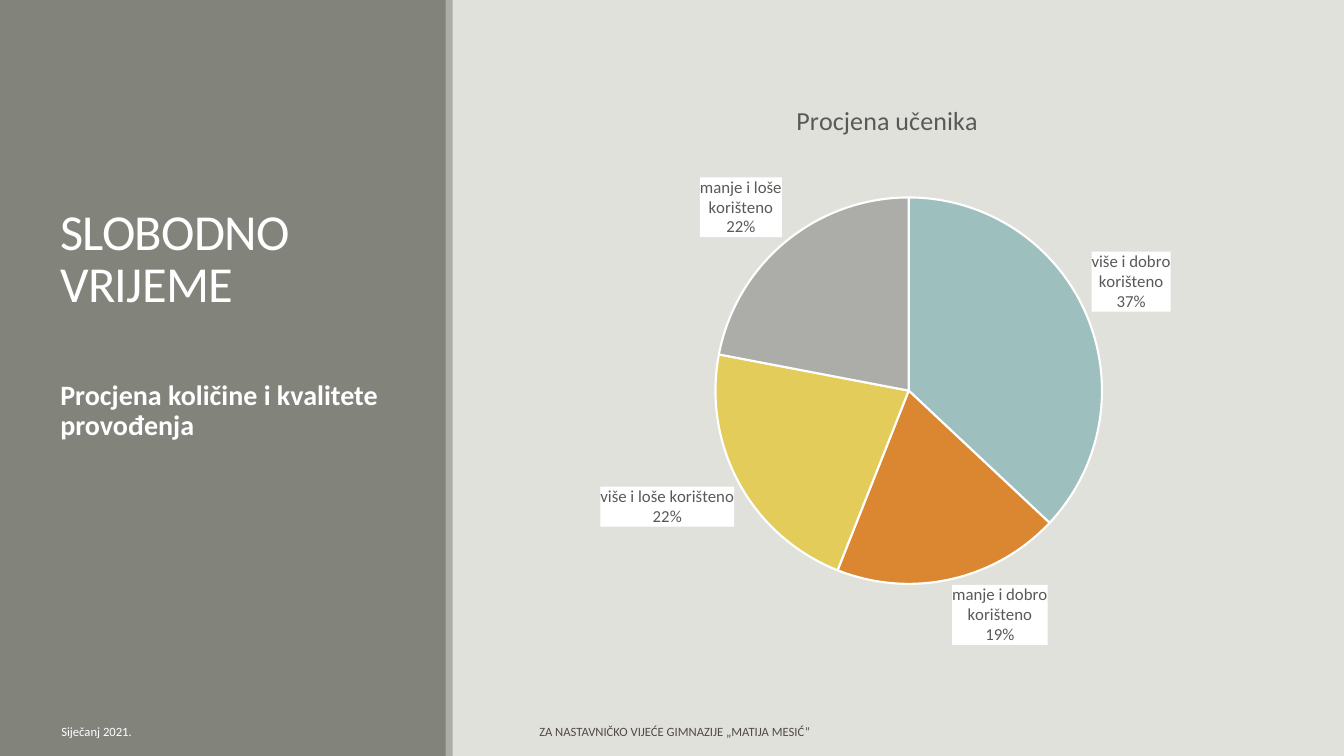
from lxml import etree
from pptx import Presentation
from pptx import util as u
from pptx.chart.data import CategoryChartData
from pptx.dml.color import RGBColor
from pptx.enum import chart as ch, shapes, text
from pptx.oxml import parse_xml
from pptx.oxml.ns import nsdecls, qn

WIDTH, HEIGHT = 13.33, 7.5
FONT = "Calibri"
COLORS = {
    "page": "E1E1DB", "panel": "82847C", "stripe": "ACADA8", "white": "FFFFFF",
    "footer": "514949", "label": "595959",
}
# category, percent, slice colour
SLICES = [
    ("više i dobro korišteno", 37, "9DBFBE"),
    ("manje i dobro korišteno", 19, "DB8631"),
    ("više i loše korišteno", 22, "E3CC5A"),
    ("manje i loše korišteno", 22, "ACADA8"),
]


def inches(box):
    return [u.Inches(length) for length in box]


def paint(fill, color):
    fill.solid()
    fill.fore_color.rgb = RGBColor.from_string(color)


def style_font(font, size, color, bold=False):
    font.name, font.size, font.bold = FONT, u.Pt(size), bold
    font.color.rgb = RGBColor.from_string(color)


def add_band(page, box, color):
    band = page.shapes.add_shape(shapes.MSO_SHAPE.RECTANGLE, *inches(box))
    band.shadow.inherit = False
    paint(band.fill, color)
    band.line.fill.background()


def add_words(page, box, words, size, color, anchor, bold=False, leading=1.0):
    frame = page.shapes.add_textbox(*inches(box)).text_frame
    frame.word_wrap = True
    frame.vertical_anchor = anchor
    frame.text = words
    para = frame.paragraphs[0]
    para.line_spacing = leading
    span = para.runs[0]
    style_font(span.font, size, color, bold)
    return span


def add_side_panel(page, box):
    left, top, width, height = box
    add_band(page, box, COLORS["panel"])
    add_band(page, (left + width - 0.01, top, 0.07, height), COLORS["stripe"])

    # Title and subtitle share one column
    margin, column = left + 0.5, 3.5
    title = add_words(page, (margin, top + 0.65, column, 2.5), "SLOBODNO VRIJEME", 36,
                      COLORS["white"], text.MSO_ANCHOR.BOTTOM, leading=0.85)
    title.font._element.set("spc", "-50")
    add_words(page, (margin, top + 3.73, column, 3.17),
              "Procjena količine i kvalitete provođenja", 20,
              COLORS["white"], text.MSO_ANCHOR.TOP, bold=True, leading=0.9)


def add_footer(page, box):
    left, top, width, height = box
    add_words(page, (left + 0.51, top, 2.86, height), "Siječanj 2021.", 9,
              COLORS["white"], text.MSO_ANCHOR.MIDDLE)
    add_words(page, (left + 5.25, top, 5.08, height),
              "ZA NASTAVNIČKO VIJEĆE GIMNAZIJE „MATIJA MESIĆ”", 9,
              COLORS["footer"], text.MSO_ANCHOR.MIDDLE)


def add_pie(page, box):
    data = CategoryChartData()
    data.categories = [name for name, _, _ in SLICES]
    data.add_series("Procjena učenika", [percent for _, percent, _ in SLICES])
    chart = page.shapes.add_chart(ch.XL_CHART_TYPE.PIE, *inches(box), data).chart
    chart.has_legend = False
    style_font(chart.font, 12, COLORS["label"])

    # Heading
    chart.has_title = True
    heading = chart.chart_title.text_frame
    heading.text = "Procjena učenika"
    style_font(heading.paragraphs[0].runs[0].font, 18.6, COLORS["label"])
    chart.chart_title.include_in_layout = False

    # Slices
    plot = chart.plots[0]
    plot.vary_by_categories = True
    for index, (_, _, color) in enumerate(SLICES):
        form = plot.series[0].points[index].format
        paint(form.fill, color)
        form.line.color.rgb = RGBColor.from_string(COLORS["white"])
        form.line.width = u.Pt(1.5)

    # Labels on white, category above percent
    labels = plot.series[0].data_labels
    labels.show_value = False
    labels.show_category_name = labels.show_percentage = True
    labels.number_format, labels.number_format_is_linked = "0%", False
    labels.position = ch.XL_LABEL_POSITION.OUTSIDE_END
    style_font(labels.font, 12, COLORS["label"])
    root = labels._element
    root.find(qn("c:txPr")).addprevious(parse_xml(
        f'<c:spPr {nsdecls("c", "a")}><a:solidFill>'
        f'<a:srgbClr val="{COLORS["white"]}"/></a:solidFill></c:spPr>'))
    separator = etree.Element(qn("c:separator"))
    separator.text = "\n"
    flags = [root.find(qn(tag)) for tag in ("c:showBubbleSize", "c:showPercent")]
    next(flag for flag in flags if flag is not None).addnext(separator)

    # Pie position as shares of the chart
    shares = {"x": 0.26, "y": 0.2, "w": 0.54, "h": 0.67}
    places = "".join(f'<c:{key} val="{share}"/>' for key, share in shares.items())
    area = chart._chartSpace.chart.plotArea
    for layout in area.findall(qn("c:layout")):
        area.remove(layout)
    area.insert(0, parse_xml(
        f'<c:layout {nsdecls("c")}><c:manualLayout><c:layoutTarget val="inner"/>'
        f'<c:xMode val="edge"/><c:yMode val="edge"/>{places}'
        '</c:manualLayout></c:layout>'))


def main():
    deck = Presentation()
    deck.slide_width, deck.slide_height = inches((WIDTH, HEIGHT))
    page = deck.slides.add_slide(deck.slide_layouts[6])
    paint(page.background.fill, COLORS["page"])
    add_side_panel(page, (0, 0, 4.43, HEIGHT))
    add_pie(page, (5.25, 0.8, 7.1, 5.75))
    add_footer(page, (0, 7.06, WIDTH, 0.4))
    deck.save("out.pptx")


if __name__ == "__main__":
    main()
